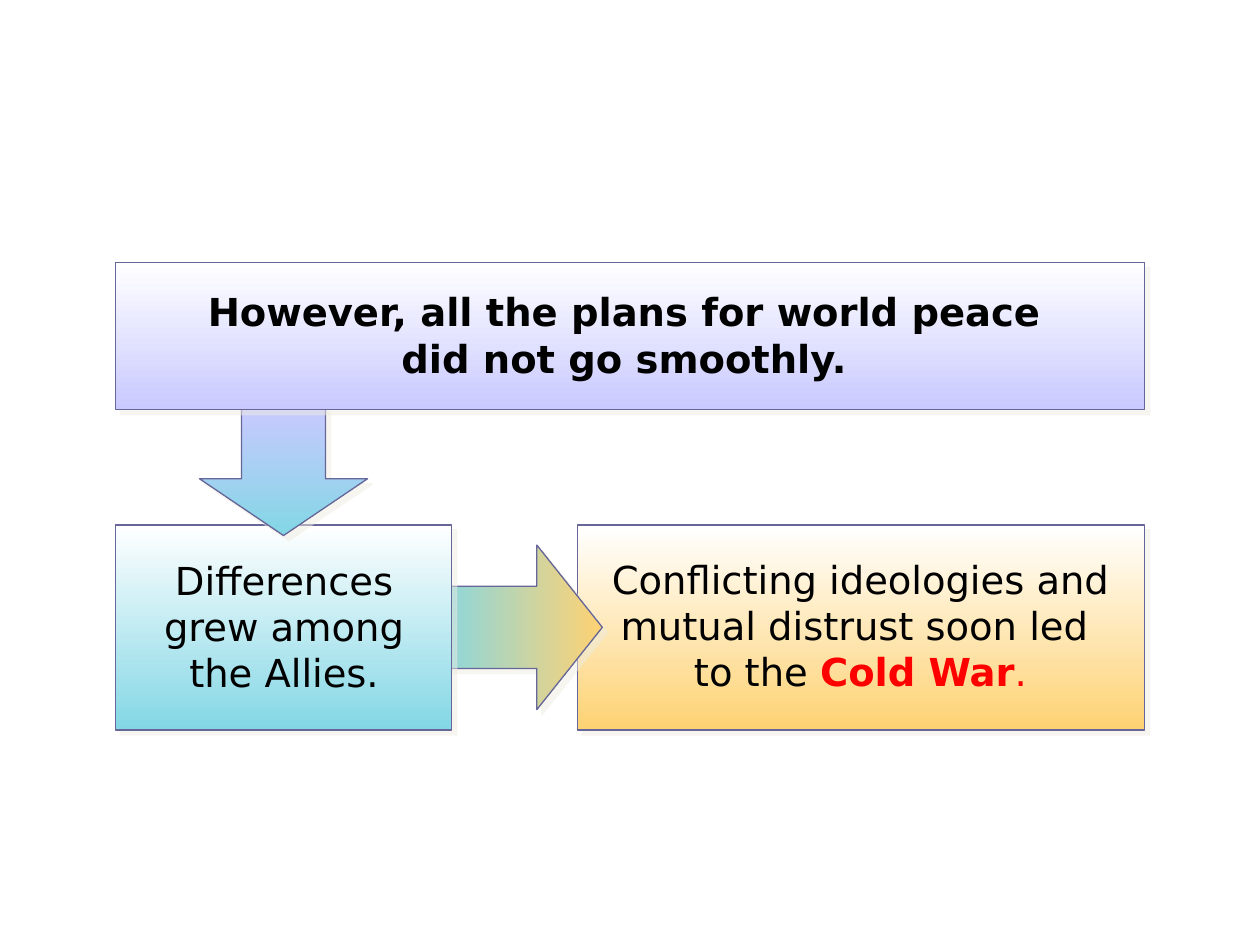
from lxml import etree
from pptx import Presentation
from pptx.dml.color import RGBColor
from pptx.enum.shapes import MSO_SHAPE as Shape
from pptx.enum.text import MSO_AUTO_SIZE as AutoSize, PP_ALIGN as Align
from pptx.oxml.ns import qn
from pptx.util import Pt

WHITE = RGBColor(0xFF, 0xFF, 0xFF)
BLACK = RGBColor(0, 0, 0)
RED = RGBColor(0xFF, 0, 0)
LAVENDER = RGBColor(0xC9, 0xC9, 0xFF)
AQUA = RGBColor(0x83, 0xD7, 0xE5)
AMBER = RGBColor(0xFE, 0xD2, 0x73)
SLATE = RGBColor(0x66, 0x66, 0x99)
SHADOW = RGBColor(0xEE, 0xEC, 0xE1)

DOWN, RIGHT = 270, 0  # gradient directions, counter-clockwise degrees
BREAK = None  # marks a line break among the runs


class FlowSlide:
    font = "DejaVu Sans"
    size = Pt(22)

    def __init__(self, slide):
        self.slide = slide

    def add_shadow(self, shape):
        """Give the shape a hard shadow towards the lower right."""
        shape.shadow.inherit = False
        effects = shape.element.spPr.find(qn("a:effectLst"))
        outer = etree.SubElement(effects, qn("a:outerShdw"), blurRad="0",
                                 dist=str(Pt(4.2)), dir=str(45 * 60000),
                                 algn="ctr", rotWithShape="0")
        color = etree.SubElement(outer, qn("a:srgbClr"), val=str(SHADOW))
        etree.SubElement(color, qn("a:alpha"), val="50000")

    def add_block(self, shapes, kind, area, colors, angle, line_width):
        """Add a gradient shape with an outline and a shadow."""
        block = shapes.add_shape(kind, *map(Pt, area))
        block.fill.gradient()
        block.fill.gradient_angle = angle
        for stop, color, position in zip(block.fill.gradient_stops, colors, (0, 1)):
            stop.color.rgb = color
            stop.position = position
        block.line.color.rgb = SLATE
        block.line.width = Pt(line_width)
        self.add_shadow(block)
        return block

    def add_arrow(self, kind, area, colors, angle, head):
        arrow = self.add_block(self.slide.shapes, kind, area, colors, angle, 0.75)
        arrow.adjustments[0] = 0.5
        arrow.adjustments[1] = head

    def add_card(self, area, color, text_area, runs):
        """Group a box that fades from white with the text on it."""
        group = self.slide.shapes.add_group_shape()
        self.add_block(group.shapes, Shape.RECTANGLE, area, (WHITE, color), DOWN, 1)
        box = group.shapes.add_textbox(*map(Pt, text_area))
        box.text_frame.word_wrap = True
        box.text_frame.auto_size = AutoSize.SHAPE_TO_FIT_TEXT
        para = box.text_frame.paragraphs[0]
        para.alignment = Align.CENTER
        for run in runs:
            if run is BREAK:
                para.add_line_break()
            else:
                self.add_span(para, *run)

    def add_span(self, para, text, color=BLACK, bold=False):
        span = para.add_run()
        span.text = text
        span.font.name = self.font
        span.font.size = self.size
        span.font.bold = bold
        span.font.color.rgb = color


def main():
    deck = Presentation()
    deck.slide_width, deck.slide_height = Pt(720), Pt(540)
    page = FlowSlide(deck.slides.add_slide(deck.slide_layouts[6]))

    page.add_card((330, 300, 324, 117), AMBER, (337.7, 314, 308, 86.4), [
        ("Conflicting ideologies and mutual distrust soon led ",), BREAK,
        ("to the ",), ("Cold War", RED, True), (".", RED)])
    page.add_arrow(Shape.RIGHT_ARROW, (246.2, 311.5, 98, 94),
                   (AQUA, AMBER), RIGHT, 0.398)
    page.add_card((66, 300, 192, 117), AQUA, (71.3, 314.5, 182, 86.4), [
        ("Differences grew among the Allies.",)])
    page.add_arrow(Shape.DOWN_ARROW, (114, 232.5, 96, 73.5),
                   (LAVENDER, AQUA), DOWN, 0.441)
    page.add_card((66, 150, 588, 84), LAVENDER, (73.4, 161.3, 574, 60), [
        ("However, all the plans for world peace ", BLACK, True), BREAK,
        ("did not go smoothly. ", BLACK, True)])

    deck.save("out.pptx")


if __name__ == "__main__":
    main()
